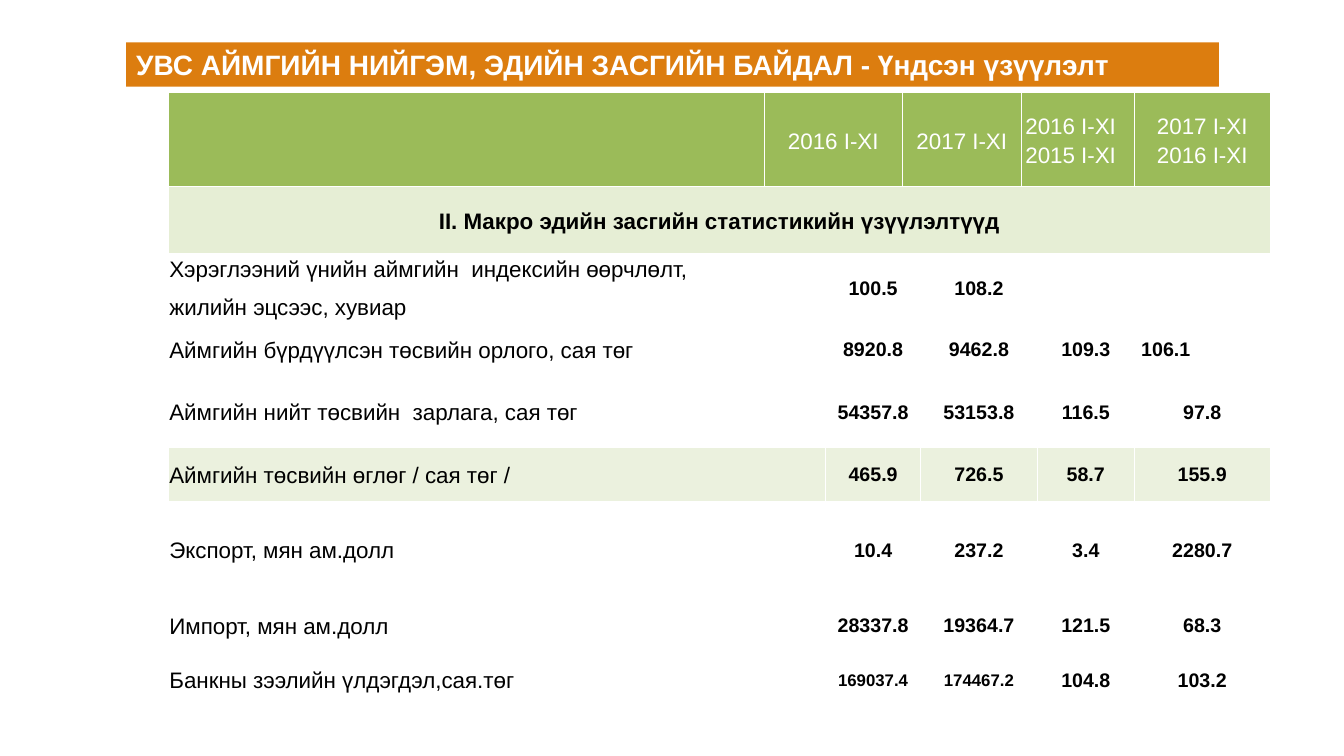
from dataclasses import dataclass
from lxml import etree
from pptx import Presentation
from pptx.dml.color import RGBColor
from pptx.enum.text import MSO_ANCHOR, MSO_AUTO_SIZE, PP_ALIGN
from pptx.oxml.ns import qn
from pptx.util import Inches, Pt

LEFT, MID, JUST = PP_ALIGN.LEFT, PP_ALIGN.CENTER, PP_ALIGN.JUSTIFY
CENTER = MSO_ANCHOR.MIDDLE
FIXED = MSO_AUTO_SIZE.NONE
WHITE, BLACK, ORANGE = "FFFFFF", "000000", "DC7D0F"
GREEN, PALE, BAND = "9BBB59", "E6EED5", "EBF1DE"
UNIT = Inches(0.01)
WIDE, HIGH = 1333, 750
COLS = [591, 61, 76, 18, 100, 16, 96, 135]
ROWS = [93, 67, 68, 54, 70, 54, 96, 54, 54]
HEAD_SPANS = [(0, 0), (1, 2), (3, 4), (5, 6), (7, 7)]
BODY_SPANS = [(0, 1), (2, 3), (4, 5), (6, 6), (7, 7)]
LAST_SPANS = [(0, 1), (2, 3), (4, 5), (6, 7)]


@dataclass
class Style:
    size: int
    color: str = BLACK
    bold: bool = False
    align: PP_ALIGN = MID
    line: float = 1.0
    after: int = 0
    inset: int = 1


@dataclass
class Entry:
    text: str
    style: Style
    fill: str = WHITE


HEAD = Style(16, WHITE, line=1.15, inset=2)
RATIO = Style(16, WHITE, align=LEFT, line=1.15, inset=4)
PART = Style(16, bold=True, line=1.15)
LABEL = Style(16, align=LEFT, line=1.07, after=8)
VALUE = Style(14, bold=True)
SMALL = Style(12, bold=True)
ASIDE = Style(14, bold=True, align=LEFT, inset=7)
TITLE = Style(20, WHITE, True, JUST)

HEADS = ["", "2016 I-XI", "2017 I-XI", "2016 I-XI\n2015 I-XI", "2017 I-XI\n2016 I-XI"]
DATA = [
    ("Хэрэглээний үнийн аймгийн  индексийн өөрчлөлт,\nжилийн эцсээс, хувиар",
     "100.5", "108.2", "", ""),
    ("Аймгийн бүрдүүлсэн төсвийн орлого, сая төг", "8920.8", "9462.8", "109.3", "106.1"),
    ("Аймгийн нийт төсвийн  зарлага, сая төг", "54357.8", "53153.8", "116.5", "97.8"),
    ("Аймгийн төсвийн өглөг / сая төг /", "465.9", "726.5", "58.7", "155.9"),
    ("Экспорт, мян ам.долл", "10.4", "237.2", "3.4", "2280.7"),
    ("Импорт, мян ам.долл", "28337.8", "19364.7", "121.5", "68.3"),
    ("Банкны зээлийн үлдэгдэл,сая.төг", "169037.4", "174467.2", "104.8", "103.2"),
]


def grid(count: int) -> int:
    return count * UNIT


def paint(fill, color: str) -> None:
    fill.solid()
    fill.fore_color.rgb = RGBColor.from_string(color)


def write(frame, text: str, style: Style) -> None:
    frame.text = text
    for para in frame.paragraphs:
        para.alignment = style.align
        para.line_spacing = style.line
        para.space_before = Pt(0)
        para.space_after = Pt(style.after)
        para.font.size = Pt(style.size)
        for run in para.runs:
            run.font.name = "Arial"
            run.font.size = Pt(style.size)
            run.font.bold = style.bold
            run.font.color.rgb = RGBColor.from_string(style.color)


def edge(cell) -> None:
    props = cell._tc.get_or_add_tcPr()
    for side in ("lnL", "lnR", "lnT", "lnB"):
        line = etree.SubElement(props, qn("a:" + side), w=str(Pt(1)))
        solid = etree.SubElement(line, qn("a:solidFill"))
        etree.SubElement(solid, qn("a:srgbClr"), val=WHITE)


def put(cell, entry: Entry) -> None:
    cell.vertical_anchor = CENTER
    cell.margin_left = cell.margin_right = grid(entry.style.inset)
    cell.margin_top = cell.margin_bottom = 0
    write(cell.text_frame, entry.text, entry.style)


def fill_row(table, row: int, spans: list[tuple[int, int]], entries: list[Entry]) -> None:
    for (first, last), entry in zip(spans, entries):
        cell = table.cell(row, first)
        if last > first:
            cell.merge(table.cell(row, last))
        put(cell, entry)
        for col in range(first, last + 1):
            part = table.cell(row, col)
            edge(part)
            paint(part.fill, entry.fill)


def body(items: tuple[str, ...]) -> list[Entry]:
    fill = BAND if "өглөг" in items[0] else WHITE
    entries = [Entry(items[0], LABEL, fill)]
    for item in items[1:]:
        style = SMALL if len(item) > 7 else ASIDE if item == "106.1" else VALUE
        entries.append(Entry(item, style, fill))
    return entries


def add_title(slide) -> None:
    title = slide.shapes.title
    title.left, title.top = grid(125), grid(42)
    title.width, title.height = grid(1084), grid(44)
    paint(title.fill, ORANGE)
    frame = title.text_frame
    frame.word_wrap = True
    frame.auto_size = FIXED
    frame.vertical_anchor = CENTER
    write(frame, "УВС АЙМГИЙН НИЙГЭМ, ЭДИЙН ЗАСГИЙН БАЙДАЛ - Үндсэн үзүүлэлт", TITLE)


def add_data(slide) -> None:
    table = slide.shapes.add_table(
        len(ROWS), len(COLS), grid(167), grid(92), grid(sum(COLS)), grid(sum(ROWS))
    ).table
    table.first_row = table.horz_banding = False
    for col, width in zip(table.columns, COLS):
        col.width = grid(width)
    for row, height in zip(table.rows, ROWS):
        row.height = grid(height)
    heads = [Entry(text, RATIO if "2015" in text else HEAD, GREEN) for text in HEADS]
    fill_row(table, 0, HEAD_SPANS, heads)
    part = Entry("II. Макро эдийн засгийн статистикийн үзүүлэлтүүд", PART, PALE)
    fill_row(table, 1, [(0, len(COLS) - 1)], [part])
    for row, items in enumerate(DATA, 2):
        fill_row(table, row, BODY_SPANS, body(items))


def main() -> None:
    deck = Presentation()
    deck.slide_width, deck.slide_height = grid(WIDE), grid(HIGH)
    slide = deck.slides.add_slide(deck.slide_layouts[5])
    add_title(slide)
    add_data(slide)
    deck.save("out.pptx")


if __name__ == "__main__":
    main()
